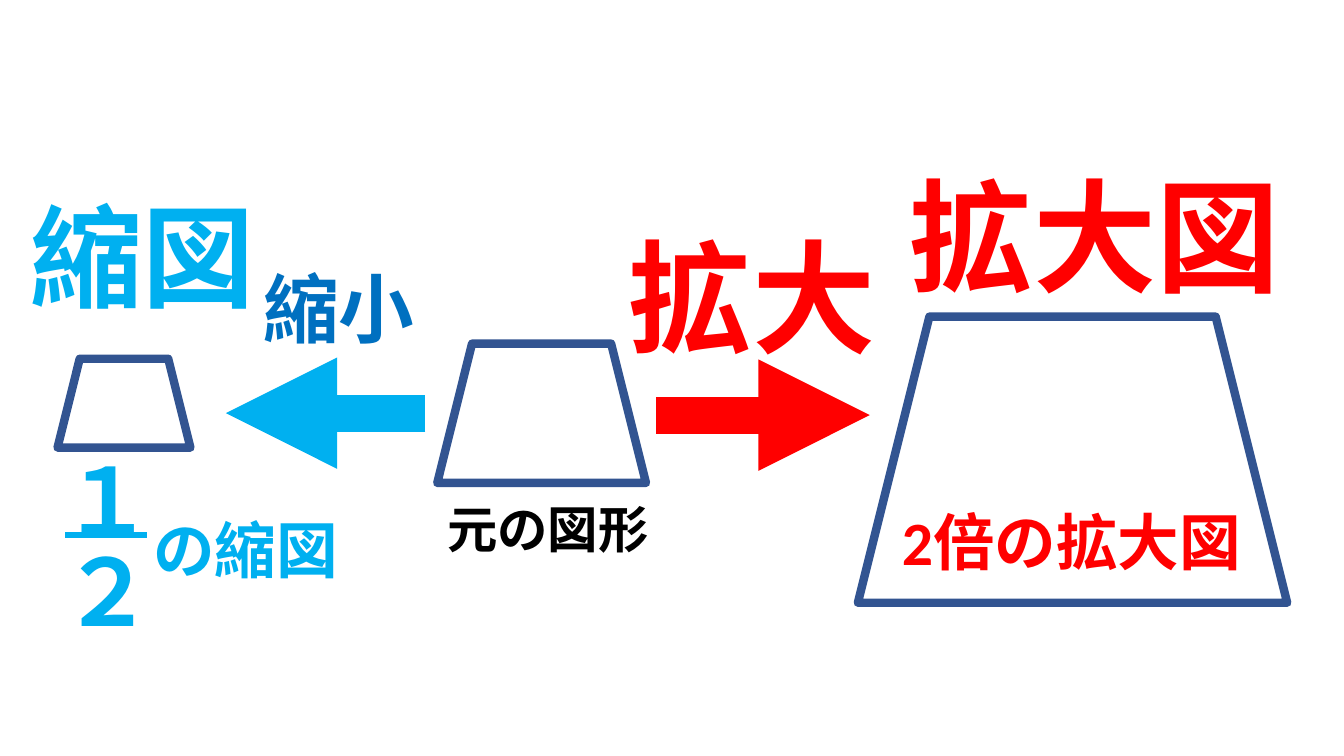
from pptx import Presentation
from pptx import util as u
from pptx.dml.color import RGBColor
from pptx.enum import shapes, text
from pptx.oxml.ns import qn
from lxml import etree

RED, SKY, BLUE, NAVY, BLACK = "FF0000", "00B0F0", "0070C0", "325491", "000000"


def color(value):
    return RGBColor.from_string(value)


def add_label(page, box, words, size, tint, wrap=False):
    label = page.shapes.add_textbox(*map(u.Cm, box))
    frame = label.text_frame
    frame.word_wrap = wrap
    frame.auto_size = text.MSO_AUTO_SIZE.SHAPE_TO_FIT_TEXT
    para = frame.paragraphs[0]
    para.text = words
    para.font.name = "Calibri"
    para.font.size = u.Pt(size)
    para.font.bold = True
    para.font.color.rgb = color(tint)


def add_rule(page, start, end, y, tint, width):
    rule = page.shapes.add_connector(
        shapes.MSO_CONNECTOR.STRAIGHT, u.Cm(start), u.Cm(y), u.Cm(end), u.Cm(y))
    rule.line.color.rgb = color(tint)
    rule.line.width = u.Pt(width)
    properties = rule._element.spPr
    etree.SubElement(properties, qn("a:effectLst"))
    return rule


def add_trapezoid(page, box):
    figure = page.shapes.add_shape(shapes.MSO_SHAPE.TRAPEZOID, *map(u.Cm, box))
    figure.shadow.inherit = False
    figure.fill.background()
    figure.line.color.rgb = color(NAVY)
    figure.line.width = u.Pt(6)


def add_step(page, start, y, length, tint):
    arrow = add_rule(page, start, start + length, y, tint, 26.5)
    line = arrow._element.spPr.find(qn("a:ln"))
    etree.SubElement(line, qn("a:tailEnd"), type="triangle")


def add_half(page, left, top, width, height):
    add_trapezoid(page, (left, top, width, height))
    add_label(page, (left - 0.94, top - 4.44, 6.22, 3.68), "縮図", 80, SKY)
    add_label(page, (left + 2.16, top + 3.74, 5.64, 2.13), "の縮図", 44, SKY, True)
    for digit, drop in (("２", 4.3), ("１", 2.01)):
        add_label(page, (left - 0.14, top + drop, 2.87, 3.07), digit, 66, SKY)
    add_rule(page, left + 0.2, left + 2.26, top + 4.45, SKY, 4.5)


def add_base(page, left, top, width, height):
    add_trapezoid(page, (left, top, width, height))
    add_label(page, (left, top + height + 0.25, 5.64, 1.8), "元の図形", 36, BLACK)


def add_double(page, left, top, width, height):
    add_trapezoid(page, (left, top, width, height))
    add_label(page, (left + 1.06, top - 4.07, 10.41, 4.01), "拡大図", 88, RED, True)
    add_label(page, (left + 0.86, top + 4.59, 9.65, 2.13), "2倍の拡大図", 44, RED, True)


def add_shrink(page, start, y, length):
    add_step(page, start, y, length, SKY)
    add_label(page, (start - 4.34, y - 3.93, 4.37, 2.57), "縮小", 54, BLUE)


def add_grow(page, start, y, length):
    add_step(page, start, y, length, RED)
    add_label(page, (start - 0.94, y - 5.0, 6.78, 4.01), "拡大", 88, RED)


def main():
    deck = Presentation()
    deck.slide_width, deck.slide_height = u.Cm(33.87), u.Cm(19.05)
    page = deck.slides.add_slide(deck.slide_layouts[6])
    add_half(page, 1.45, 9.04, 3.35, 2.24)
    add_base(page, 11.02, 8.66, 5.26, 3.51)
    add_double(page, 21.62, 7.98, 10.82, 7.21)
    add_shrink(page, 10.72, 10.41, -5.03)
    add_grow(page, 16.54, 10.46, 5.38)
    deck.save("out.pptx")


if __name__ == "__main__":
    main()
